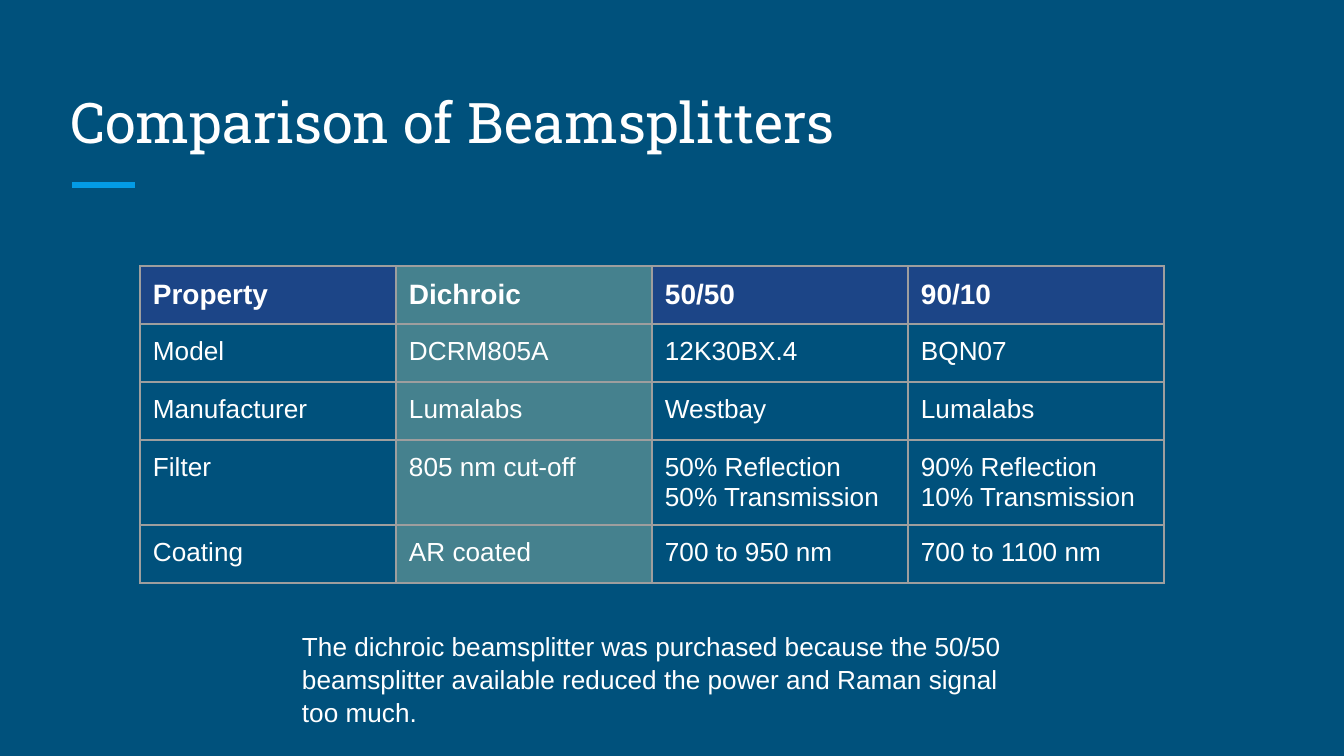
"""Build the slide that compares three beamsplitters in a table."""
from lxml.etree import SubElement
from pptx import Presentation
from pptx.dml.color import RGBColor
from pptx.enum.shapes import MSO_CONNECTOR as Connector
from pptx.enum.text import MSO_ANCHOR as Anchor, MSO_AUTO_SIZE as AutoSize, PP_ALIGN as Align
from pptx.oxml.ns import qn
from pptx.util import Pt

PX = 914400 / 134.4
INSET = round(13 * PX)
WHITE, BLUE, TEAL = "FFFFFF", "1C4587", "45818E"


def color(value):
    return RGBColor.from_string(value)


def write(frame, text, font="Arial", size=14, bold=False, spacing=1.0, anchor=Anchor.TOP):
    frame.word_wrap = True
    frame.vertical_anchor = anchor
    frame.text = text
    for paragraph in frame.paragraphs:
        paragraph.alignment = Align.LEFT
        paragraph.line_spacing = spacing
        for run in paragraph.runs:
            run.font.name = font
            run.font.size = Pt(size)
            run.font.bold = bold
            run.font.color.rgb = color(WHITE)


presentation = Presentation()
presentation.slide_width, presentation.slide_height = round(1344 * PX), round(756 * PX)
slide = presentation.slides.add_slide(presentation.slide_layouts[5])
slide.background.fill.solid()
slide.background.fill.fore_color.rgb = color("00517C")

title = slide.shapes.title
title.left, title.top, title.width, title.height = [round(n * PX) for n in (57, 67, 1230, 101)]
note = slide.shapes.add_textbox(*[round(n * PX) for n in (289, 616, 766, 73)])
for shape in (title, note):
    frame = shape.text_frame
    frame.auto_size = AutoSize.NONE
    frame.margin_left = frame.margin_right = frame.margin_top = frame.margin_bottom = INSET
write(title.text_frame, "Comparison of Beamsplitters", font="Roboto Slab", size=30, anchor=Anchor.BOTTOM)
write(
    note.text_frame,
    "The dichroic beamsplitter was purchased because the 50/50 beamsplitter "
    "available reduced the power and Raman signal too much.",
    spacing=1.05,
)

accent = slide.shapes.add_connector(Connector.STRAIGHT, *[round(n * PX) for n in (72, 185, 135, 185)])
accent.line.color.rgb = color("039BE5")
accent.line.width = Pt(3)
SubElement(accent.element.spPr, qn("a:effectLst"))

rows = [
    ["Property", "Dichroic", "50/50", "90/10"],
    ["Model", "DCRM805A", "12K30BX.4", "BQN07"],
    ["Manufacturer", "Lumalabs", "Westbay", "Lumalabs"],
    ["Filter", "805 nm cut-off", "50% Reflection\n50% Transmission", "90% Reflection\n10% Transmission"],
    ["Coating", "AR coated", "700 to 950 nm", "700 to 1100 nm"],
]
heights = [58, 58, 58, 85, 58]
area = [round(n * PX) for n in (140, 266, 4 * 256, sum(heights))]
table = slide.shapes.add_table(len(rows), 4, *area).table
table.first_row = table.horz_banding = False
for column in table.columns:
    column.width = round(256 * PX)

for row_index, (texts, height) in enumerate(zip(rows, heights)):
    table.rows[row_index].height = round(height * PX)
    header = row_index == 0
    for column_index, text in enumerate(texts):
        cell = table.cell(row_index, column_index)
        cell.margin_left = cell.margin_right = cell.margin_top = cell.margin_bottom = INSET
        write(cell.text_frame, text, size=15 if header else 14, bold=header)
        properties = cell._tc.get_or_add_tcPr()
        for side in ("lnL", "lnR", "lnT", "lnB"):
            border = SubElement(properties, qn(f"a:{side}"), w=str(Pt(0.75)))
            SubElement(SubElement(border, qn("a:solidFill")), qn("a:srgbClr"), val="9E9E9E")
        if header or column_index == 1:
            cell.fill.solid()
            cell.fill.fore_color.rgb = color(TEAL if column_index == 1 else BLUE)
        else:
            cell.fill.background()

presentation.save("out.pptx")
